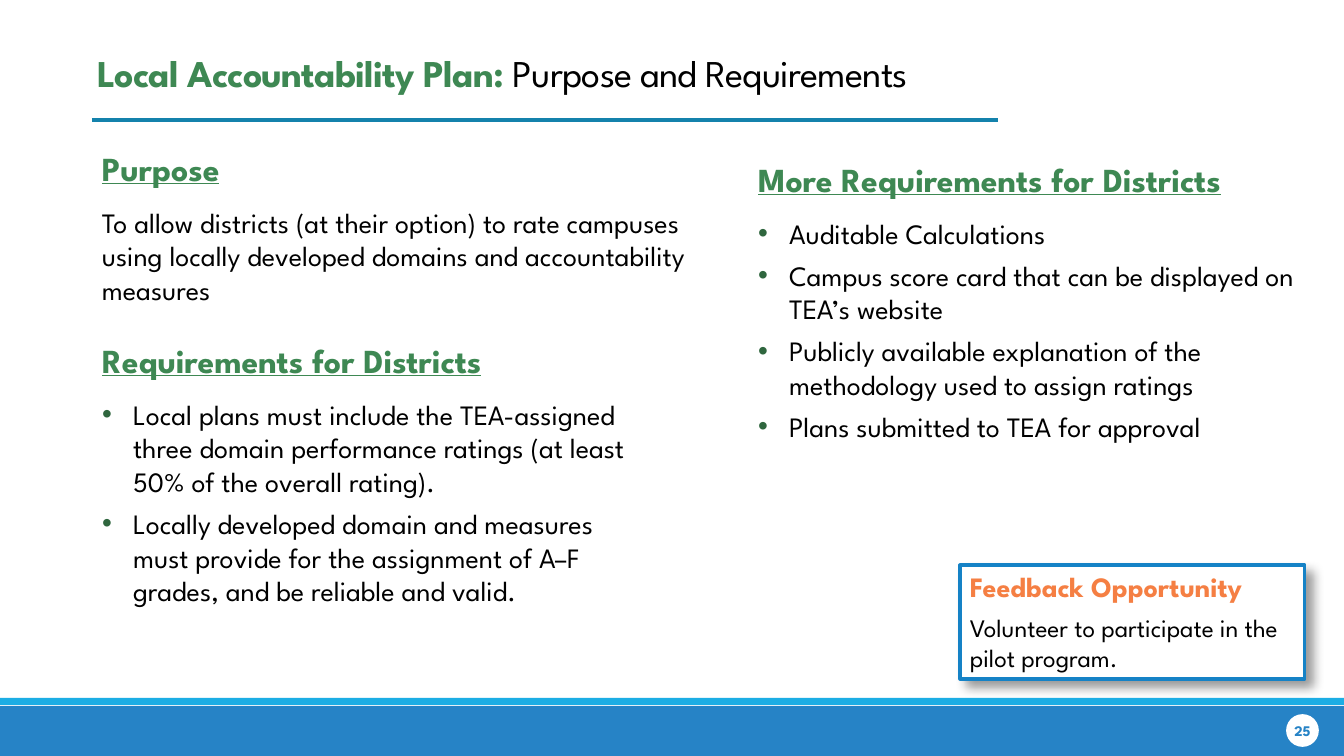
from lxml import etree
from pptx import Presentation
from pptx.dml.color import RGBColor
from pptx.enum.shapes import MSO_CONNECTOR, MSO_SHAPE
from pptx.enum.text import MSO_ANCHOR, MSO_AUTO_SIZE, PP_ALIGN
from pptx.oxml.ns import qn
from pptx.util import Emu, Pt

RECTANGLE, OVAL = MSO_SHAPE.RECTANGLE, MSO_SHAPE.OVAL
STRAIGHT = MSO_CONNECTOR.STRAIGHT
TOP, MIDDLE = MSO_ANCHOR.TOP, MSO_ANCHOR.MIDDLE
LEFT, CENTER = PP_ALIGN.LEFT, PP_ALIGN.CENTER
FIXED_SIZE = MSO_AUTO_SIZE.NONE

PX = 914400 / 100.8  # EMU per px
HANGING = 31

THEME = {
    "font": "League Spartan",
    "band": "2683C6", "stripe": "1CADE4", "rule": "1482AC",
    "frame": "1582C6", "paper": "FFFFFF", "bullet": "2F663E", "shadow": "000000",
    # text role: size, colour, bold, underline, space after
    "title": (27, "3E8853", True, False, 0),
    "subtitle": (27, "000000", False, False, 0),
    "heading": (24, "3E8853", True, True, 12),
    "body": (20, "000000", False, False, 6),
    "bulleted": (20, "000000", False, False, 6),
    "callout": (20, "F57F43", True, False, 6),
    "note": (18, "000000", False, False, 0),
    "number": (10.5, "2683C6", True, False, 0),
}


def box(*lengths):
    return [Emu(round(length * PX)) for length in lengths]


def write(frame, lines, align=LEFT, anchor=TOP):
    frame.word_wrap = True
    frame.auto_size = FIXED_SIZE
    frame.vertical_anchor = anchor
    for i, (role, text) in enumerate(lines):
        paragraph = frame.paragraphs[0] if i == 0 else frame.add_paragraph()
        paragraph.text = text
        size, colour, bold, underline, after = THEME[role]
        props = paragraph._p.get_or_add_pPr()
        indent = box(HANGING)[0] if role == "bulleted" else 0
        props.set("marL", str(indent))
        props.set("indent", str(-indent))
        if role == "bulleted":
            tint = etree.SubElement(props, qn("a:buClr"))
            etree.SubElement(tint, qn("a:srgbClr"), val=THEME["bullet"])
            etree.SubElement(props, qn("a:buFont"), typeface="Arial")
            etree.SubElement(props, qn("a:buChar"), char="•")
        else:
            etree.SubElement(props, qn("a:buNone"))
        paragraph.alignment = align
        paragraph.space_before = Pt(0)
        paragraph.space_after = Pt(after)
        for run in paragraph.runs:
            run.font.name = THEME["font"]
            run.font.size = Pt(size)
            run.font.bold = bold
            run.font.underline = underline
            run.font.color.rgb = RGBColor.from_string(colour)


prs = Presentation()
prs.slide_width, prs.slide_height = box(1344, 756)
slide = prs.slides.add_slide(prs.slide_layouts[3])
title, requirements, more_requirements = slide.placeholders

# Title, with a lighter second half
title.left, title.top, title.width, title.height = box(87, 45, 967, 64)
write(title.text_frame, [("title", "Local Accountability Plan: ")])
subtitle = title.text_frame.paragraphs[0].add_run()
subtitle.text = "Purpose and Requirements"
size, colour, bold, underline, after = THEME["subtitle"]
subtitle.font.name = THEME["font"]
subtitle.font.size = Pt(size)
subtitle.font.bold = bold
subtitle.font.color.rgb = RGBColor.from_string(colour)
for run in title.text_frame.paragraphs[0].runs:
    run._r.get_or_add_rPr().set("spc", "-50")

# Rule under the title
rule = slide.shapes.add_connector(STRAIGHT, *box(92, 120, 998, 120))
rule.line.color.rgb = RGBColor.from_string(THEME["rule"])
rule.line.width = Pt(2.25)
etree.SubElement(rule._element.spPr, qn("a:effectLst"))

# Purpose
purpose = slide.shapes.add_textbox(*box(92, 143, 609, 169))
write(purpose.text_frame, [
    ("heading", "Purpose"),
    ("body", "To allow districts (at their option) to rate campuses using locally "
             "developed domains and accountability measures"),
])

# The two lists of requirements
columns = [
    (requirements, (92, 335, 562, 348), "Requirements for Districts", [
        "Local plans must include the TEA-assigned three domain performance ratings "
        "(at least 50% of the overall rating).",
        "Locally developed domain and measures must provide for the assignment of "
        "A–F grades, and be reliable and valid.",
    ]),
    (more_requirements, (748, 154, 562, 297), "More Requirements for Districts", [
        "Auditable Calculations",
        "Campus score card that can be displayed on TEA’s website",
        "Publicly available explanation of the methodology used to assign ratings",
        "Plans submitted to TEA for approval",
    ]),
]
for column, place, heading, items in columns:
    column.left, column.top, column.width, column.height = box(*place)
    write(column.text_frame,
          [("heading", heading)] + [("bulleted", item) for item in items])

# Footer bands, page badge and feedback card: outline is (colour, points)
panels = []
for kind, place, fill, outline in [
    (RECTANGLE, (0, 706, 1344, 50), "band", None),
    (RECTANGLE, (0, 698, 1344, 7), "stripe", None),
    (OVAL, (1287, 715, 31, 31), "paper", ("paper", 1.25)),
    (RECTANGLE, (960, 565, 345, 114), "paper", ("frame", 2.25)),
]:
    panel = slide.shapes.add_shape(kind, *box(*place))
    panel.shadow.inherit = False
    panel.fill.solid()
    panel.fill.fore_color.rgb = RGBColor.from_string(THEME[fill])
    if outline:
        panel.line.color.rgb = RGBColor.from_string(THEME[outline[0]])
        panel.line.width = Pt(outline[1])
    else:
        panel.line.fill.background()
    panels.append(panel)
band, stripe, badge, feedback = panels

# Page number
number = badge.text_frame
number.margin_left = number.margin_right = number.margin_top = number.margin_bottom = 0
write(number, [("number", "25")], CENTER, MIDDLE)
number.word_wrap = False

# Feedback text and its soft shadow
write(feedback.text_frame, [
    ("callout", "Feedback Opportunity"),
    ("note", "Volunteer to participate in the pilot program."),
])
effects = feedback._element.spPr.find(qn("a:effectLst"))
shadow = etree.SubElement(effects, qn("a:outerShdw"), blurRad=str(Pt(8)),
                          dist=str(Pt(7)), dir=str(45 * 60000), algn="tl",
                          rotWithShape="0")
shade = etree.SubElement(shadow, qn("a:srgbClr"), val=THEME["shadow"])
etree.SubElement(shade, qn("a:alpha"), val="40000")

prs.save("out.pptx")
